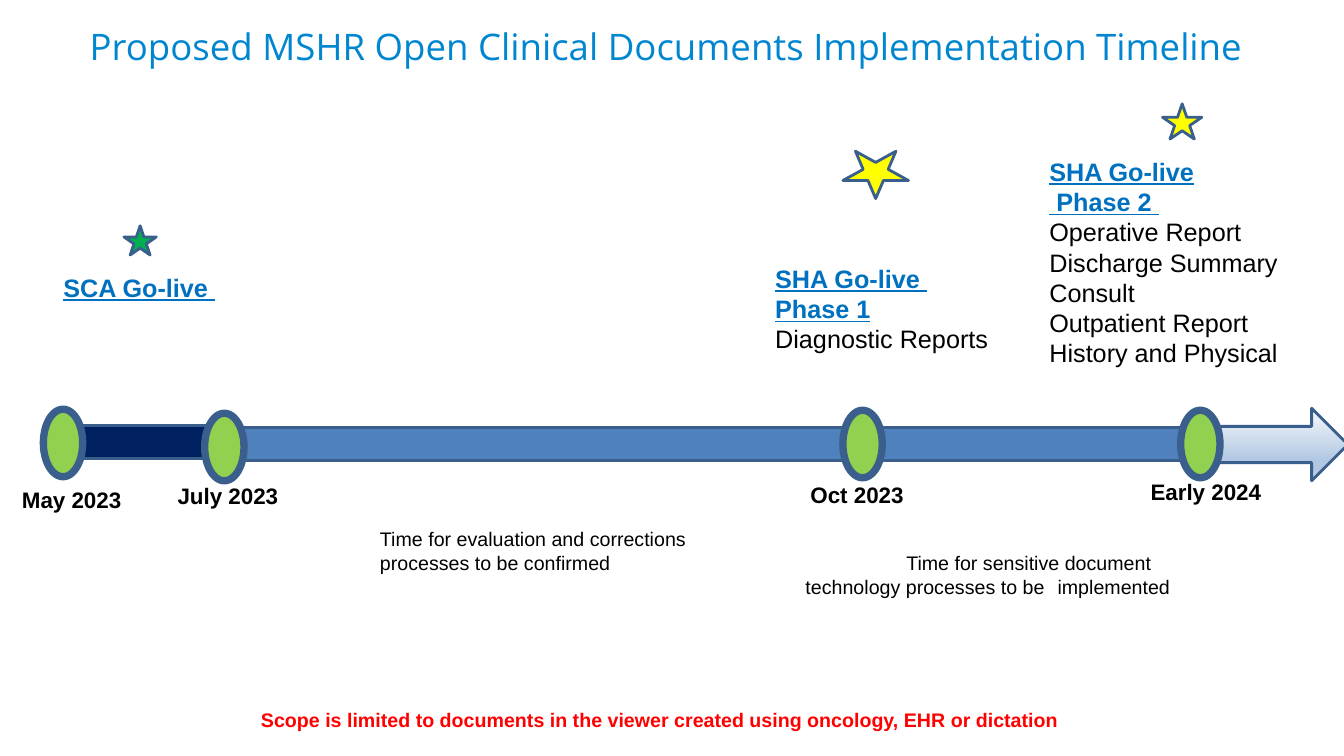
import pptx
import pptx.util
import pptx.dml.color
import pptx.enum.shapes
import pptx.enum.text
import pptx.oxml
import pptx.oxml.ns

Inches, Pt = pptx.util.Inches, pptx.util.Pt
SHAPE = pptx.enum.shapes.MSO_SHAPE
ALIGN = pptx.enum.text.PP_ALIGN

# Content
TITLE = "Proposed MSHR Open Clinical Documents Implementation Timeline"
BLACK, BLUE, RED = "000000", "0070C0", "FF0000"
OUTLINE, YELLOW, LIME = "3A5F8C", "FFFF00", "92D050"

# left, top, width, height, underlined heading lines, document lines
PHASES = [
    (0.53, 2.65, 2.23, 0.59, ["SCA Go-live "], []),
    (7.59, 2.56, 2.72, 1.02, ["SHA Go-live ", "Phase 1"],
     ["Diagnostic Reports"]),
    (10.31, 1.5, 3.0, 2.22, ["SHA Go-live", " Phase 2 "],
     ["Operative Report", "Discharge Summary", "Consult",
      "Outpatient Report", "History and Physical"]),
]
# left, top, width, height, fill, rotation
STARS = [
    (1.23, 2.24, 0.32, 0.29, "00B050", 0),
    (8.36, 1.5, 0.65, 0.47, YELLOW, 180),
    (11.53, 1.03, 0.39, 0.35, YELLOW, 0),
]
# left, top, width, height, fill
BARS = [(0.65, 4.22, 1.48, 0.33, "002060"), (2.12, 4.24, 9.7, 0.33, "4F81BD")]
ARROW = (11.81, 4.05, 1.56, 0.72)
ARROW_STOPS = [(0, "F6F9FC"), (74, "B0C6E1"), (83, "B0C6E1"), (100, "CAD9EB")]
# date, marker left and top, label left, top and width
MILESTONES = [
    ("May 2023", 0.43, 4.06, 0.1, 4.77, 1.22),
    ("July 2023", 2.03, 4.1, 1.65, 4.73, 1.22),
    ("Oct 2023", 8.36, 4.07, 7.89, 4.72, 1.22),
    ("Early 2024", 11.71, 4.07, 11.24, 4.69, 1.44),
]
EVALUATION = "Time for evaluation and corrections processes to be confirmed"
SENSITIVE = ["Time for sensitive document",
             "technology processes to be \timplemented"]
SCOPE = ("Scope is limited to documents in the viewer created using "
         "oncology, EHR or dictation")

prs = pptx.Presentation()
prs.slide_width, prs.slide_height = Inches(13.33), Inches(7.5)
s = prs.slides.add_slide(prs.slide_layouts[5])


def rgb(value):
    return pptx.dml.color.RGBColor.from_string(value)


def add_run(p, text, size, color=BLACK, bold=False, underline=False,
            font="Arial"):
    r = p.add_run()
    r.text = text
    r.font.name, r.font.size = font, Pt(size)
    r.font.bold, r.font.underline = bold, underline
    r.font.color.rgb = rgb(color)


def add_box(left, top, width, height):
    box = s.shapes.add_textbox(*map(Inches, (left, top, width, height)))
    box.text_frame.word_wrap = True
    return box.text_frame


def add_shape(kind, left, top, width, height, fill=None, line=2):
    sp = s.shapes.add_shape(kind, *map(Inches, (left, top, width, height)))
    sp.shadow.inherit = False
    sp.line.color.rgb, sp.line.width = rgb(OUTLINE), Pt(line)
    if fill:
        sp.fill.solid()
        sp.fill.fore_color.rgb = rgb(fill)
    return sp


# Title
title = s.shapes.title
title.left, title.top = Inches(0.25), Inches(0.27)
title.width, title.height = Inches(12.72), Inches(0.8)
tf = title.text_frame
tf.vertical_anchor = pptx.enum.text.MSO_ANCHOR.TOP
tf.auto_size = pptx.enum.text.MSO_AUTO_SIZE.NONE
p = tf.paragraphs[0]
p.alignment, p.line_spacing = ALIGN.CENTER, 0.8
add_run(p, TITLE, 26.1, "0086D1", font="Open Sans")

# Go-live phases and their stars
for *place, headings, documents in PHASES:
    tf = add_box(*place)
    for i, text in enumerate(headings + documents):
        p = tf.add_paragraph() if i else tf.paragraphs[0]
        heading = i < len(headings)
        add_run(p, text, 18, BLUE if heading else BLACK, heading, heading)

for *place, fill, rotation in STARS:
    add_shape(SHAPE.STAR_5_POINT, *place, fill).rotation = rotation

# Timeline bars and arrow
for bar in BARS:
    add_shape(SHAPE.RECTANGLE, *bar)

arrow = add_shape(SHAPE.RIGHT_ARROW, *ARROW)
arrow.fill.gradient()
arrow.fill.gradient_angle = 270
stops = arrow._element.spPr.find(".//" + pptx.oxml.ns.qn("a:gsLst"))
for stop in list(stops):
    stops.remove(stop)
for position, color in ARROW_STOPS:
    stops.append(pptx.oxml.parse_xml(
        f'<a:gs {pptx.oxml.ns.nsdecls("a")} pos="{position * 1000}">'
        f'<a:srgbClr val="{color}"/></a:gs>'))

# Milestones
for date, left, top, label_left, label_top, label_width in MILESTONES:
    add_shape(SHAPE.OVAL, left, top, 0.39, 0.67, LIME, 5.25)
    p = add_box(label_left, label_top, label_width, 0.37).paragraphs[0]
    p.alignment = ALIGN.CENTER
    add_run(p, date, 16, bold=True)

# Notes under the timeline
add_run(add_box(3.67, 5.18, 3.79, 0.57).paragraphs[0], EVALUATION, 14)

p = add_box(7.89, 5.42, 4.78, 0.81).paragraphs[0]
pPr = p._p.get_or_add_pPr()
pPr.set("marL", "0")
pPr.set("indent", str(Inches(1)))
pPr.append(pptx.oxml.parse_xml(
    f'<a:tabLst {pptx.oxml.ns.nsdecls("a")}>'
    f'<a:tab pos="{Inches(3)}" algn="l"/></a:tabLst>'))
add_run(p, SENSITIVE[0], 14)
p.add_line_break()
add_run(p, SENSITIVE[1], 14)

# Scope statement
p = add_box(2.49, 6.97, 8.6, 0.34).paragraphs[0]
add_run(p, SCOPE, 14, RED, bold=True)

prs.save("out.pptx")
